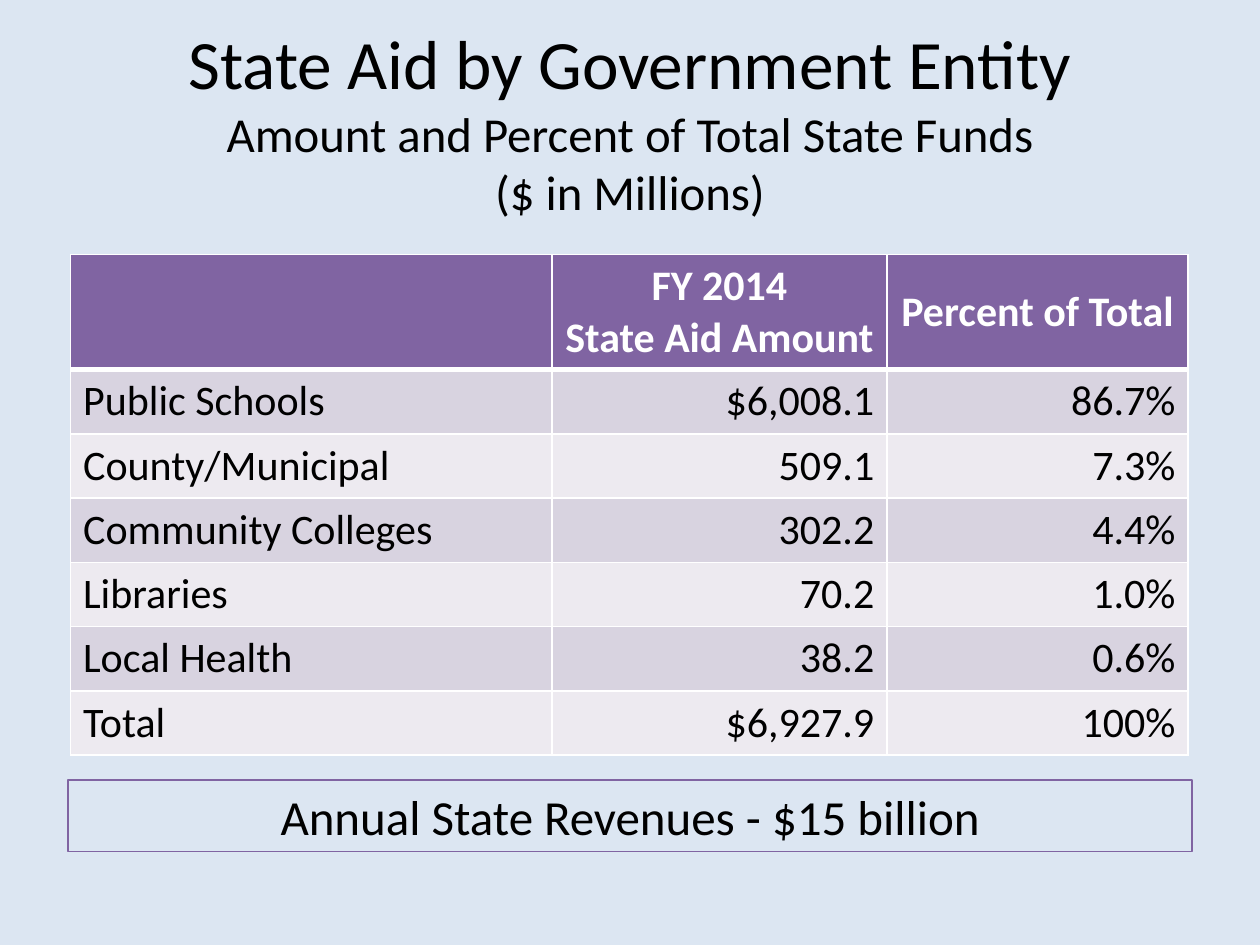
from copy import deepcopy
from lxml.etree import SubElement
from pptx import Presentation
from pptx.dml.color import RGBColor
from pptx.enum.shapes import MSO_SHAPE
from pptx.enum.text import MSO_ANCHOR, MSO_AUTO_SIZE, PP_ALIGN
from pptx.oxml.ns import qn
from pptx.util import Inches, Pt

TITLE = [("State Aid by Government Entity", 39.6),
         ("Amount and Percent of Total State Funds", 27.9),
         ("($ in Millions)", 27.9)]
HEADER = ("", "FY 2014\nState Aid Amount", "Percent of Total")
AID = [("Public Schools", "$6,008.1", "86.7%"),
       ("County/Municipal", "509.1", "7.3%"),
       ("Community Colleges", "302.2", "4.4%"),
       ("Libraries", "70.2", "1.0%"),
       ("Local Health", "38.2", "0.6%"),
       ("Total", "$6,927.9", "100%")]
REVENUES = "Annual State Revenues - $15 billion"
COLS = (3.82, 2.66, 2.39)
HEADER_H, ROW_H = 0.9, 0.51

BLACK = RGBColor(0x00, 0x00, 0x00)
WHITE = RGBColor(0xFF, 0xFF, 0xFF)
PALE_BLUE = RGBColor(0xDC, 0xE6, 0xF2)
PURPLE = RGBColor(0x80, 0x64, 0xA2)
BANDS = (RGBColor(0xD8, 0xD3, 0xE0), RGBColor(0xED, 0xEA, 0xF0))


def add_text(p, text, size=24, color=BLACK, bold=False, align=PP_ALIGN.CENTER):
    p.alignment = align
    r = p.add_run()
    r.text = text
    r.font.name = "Calibri"
    r.font.size = Pt(size)
    r.font.bold = bold
    r.font.color.rgb = color
    return r


def set_borders(cell, bottom):
    tcPr = cell._tc.get_or_add_tcPr()
    for i, (side, width) in enumerate(
            (("lnL", 1), ("lnR", 1), ("lnT", 1), ("lnB", bottom))):
        ln = SubElement(tcPr, qn(f"a:{side}"), w=str(Pt(width)))
        fill = SubElement(ln, qn("a:solidFill"))
        SubElement(fill, qn("a:srgbClr"), val=str(WHITE))
        tcPr.insert(i, ln)


def add_title(s):
    title = s.shapes.title
    title.left, title.top = Inches(0.5), Inches(0.33)
    title.width, title.height = Inches(9), Inches(1.25)
    tf = title.text_frame
    tf.auto_size = MSO_AUTO_SIZE.NONE
    tf.vertical_anchor = MSO_ANCHOR.MIDDLE
    p = tf.paragraphs[0]
    for i, (text, size) in enumerate(TITLE):
        if i:
            p.add_line_break()
            p._p[-1].append(deepcopy(r._r.rPr))
        r = add_text(p, text, size=size)


def add_aid_table(s):
    rows = [HEADER] + AID
    height = HEADER_H + ROW_H * len(AID)
    table = s.shapes.add_table(len(rows), len(COLS), Inches(0.56), Inches(2.02),
                               Inches(sum(COLS)), Inches(height)).table
    for col, width in zip(table.columns, COLS):
        col.width = Inches(width)
    for i, values in enumerate(rows):
        head = i == 0
        table.rows[i].height = Inches(HEADER_H if head else ROW_H)
        for j, value in enumerate(values):
            cell = table.cell(i, j)
            cell.fill.solid()
            cell.fill.fore_color.rgb = PURPLE if head else BANDS[(i - 1) % 2]
            set_borders(cell, 3 if head else 1)
            if head:
                cell.vertical_anchor = MSO_ANCHOR.MIDDLE
                align = PP_ALIGN.CENTER
            else:
                align = PP_ALIGN.RIGHT if j else PP_ALIGN.LEFT
            tf = cell.text_frame
            for k, line in enumerate(value.split("\n") if value else []):
                p = tf.add_paragraph() if k else tf.paragraphs[0]
                add_text(p, line, color=WHITE if head else BLACK,
                         bold=head, align=align)


def add_revenues(s):
    box = s.shapes.add_shape(MSO_SHAPE.RECTANGLE, Inches(0.54), Inches(6.19),
                             Inches(8.92), Inches(0.57))
    box.shadow.inherit = False
    box.fill.background()
    box.line.color.rgb = PURPLE
    box.line.width = Pt(0.75)
    tf = box.text_frame
    tf.word_wrap = True
    tf.auto_size = MSO_AUTO_SIZE.SHAPE_TO_FIT_TEXT
    tf.vertical_anchor = MSO_ANCHOR.TOP
    add_text(tf.paragraphs[0], REVENUES, size=28)


def main():
    prs = Presentation()
    prs.slide_width, prs.slide_height = Inches(10), Inches(7.5)
    s = prs.slides.add_slide(prs.slide_layouts[5])
    s.background.fill.solid()
    s.background.fill.fore_color.rgb = PALE_BLUE
    add_title(s)
    add_aid_table(s)
    add_revenues(s)
    prs.save("out.pptx")


if __name__ == "__main__":
    main()
